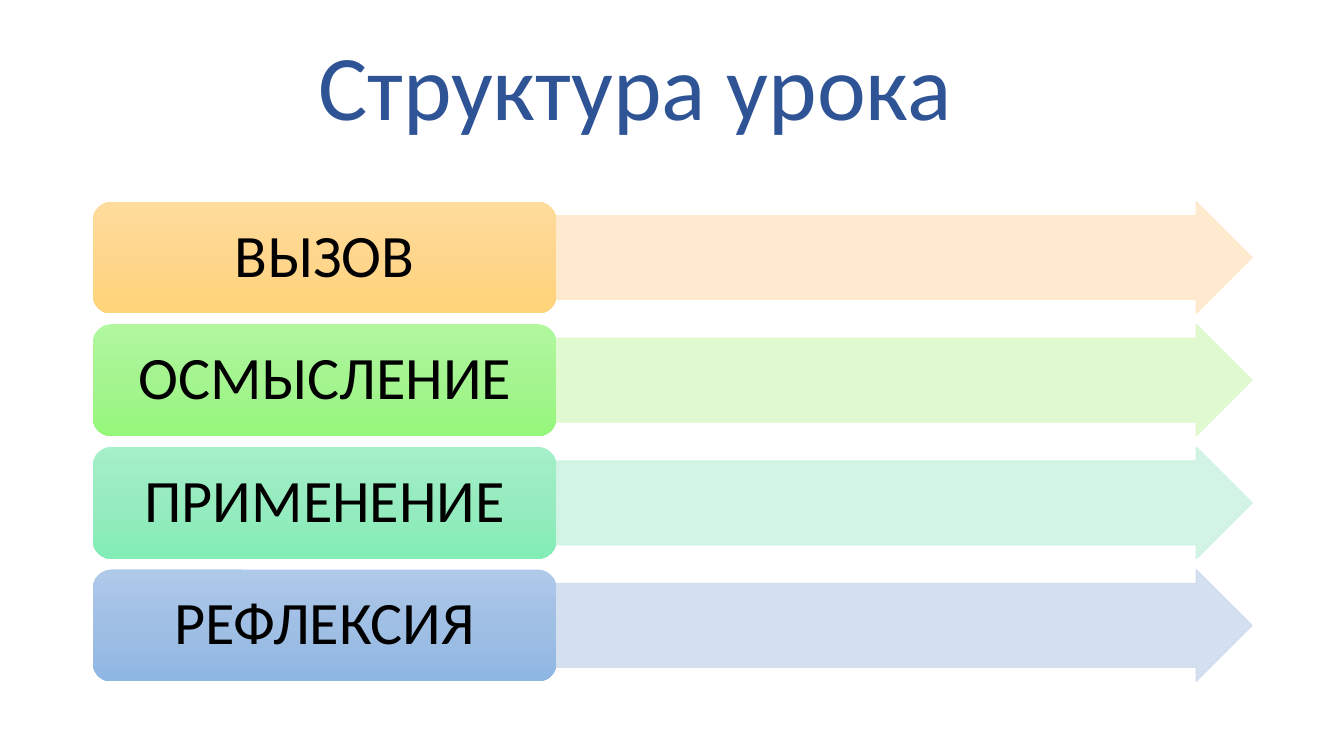
from copy import deepcopy

from pptx import Presentation
from pptx.dml.color import RGBColor
from pptx.enum.shapes import MSO_SHAPE as Shape
from pptx.enum.text import MSO_ANCHOR as Anchor, PP_ALIGN as Align
from pptx.oxml.ns import qn
from pptx.oxml.xmlchemy import OxmlElement
from pptx.util import Inches, Pt

COLORS = {
    "title": "2F5496",
    "text": "000000",
    "orange": ("FFDC9B", "FFD68D", "FFD478"),
    "orange_arrow": "FFE8CA",
    "green": ("B1F79E", "A4F490", "95F87B"),
    "green_arrow": "DEF9CB",
    "mint": ("A5EFC9", "96ECBF", "83EDB6"),
    "mint_arrow": "CDF3E3",
    "blue": ("AFC9E9", "A0BFE4", "8FB7E4"),
    "blue_arrow": "D0DCEE",
}
STAGES = [
    ("ВЫЗОВ", "orange"),
    ("ОСМЫСЛЕНИЕ", "green"),
    ("ПРИМЕНЕНИЕ", "mint"),
    ("РЕФЛЕКСИЯ", "blue"),
]
LEFT, LABEL_WIDTH, ARROW_WIDTH = 0.92, 4.6, 6.9
TOP, BOTTOM, ROW_HEIGHT = 2, 6.76, 1.11
ROW_STEP = (BOTTOM - TOP - ROW_HEIGHT) / (len(STAGES) - 1)
TITLE_MARGINS = (0.1, 0.05)
LABEL_MARGINS = (0.18, 0.09)


def set_attributes(target, values):
    for name, value in values.items():
        setattr(target, name, value)


def write_text(shape, text, size, color, margins):
    side, edge = map(Inches, margins)
    frame = shape.text_frame
    set_attributes(frame, {
        "text": text, "word_wrap": True, "vertical_anchor": Anchor.MIDDLE,
        "margin_left": side, "margin_right": side,
        "margin_top": edge, "margin_bottom": edge,
    })
    paragraph = frame.paragraphs[0]
    set_attributes(paragraph, {"alignment": Align.CENTER, "line_spacing": 0.9})
    font = paragraph.runs[0].font
    set_attributes(font, {"name": "Calibri", "size": Pt(size)})
    font.color.rgb = RGBColor.from_string(COLORS[color])


def add_block(slide, kind, left, top, width, adjustments):
    shape = slide.shapes.add_shape(
        kind, Inches(left), Inches(top), Inches(width), Inches(ROW_HEIGHT))
    shape.shadow.inherit = False
    for index, value in enumerate(adjustments):
        shape.adjustments[index] = value
    return shape


def set_opacity(color_element, percent):
    alpha = OxmlElement("a:alpha")
    alpha.set("val", str(percent * 1000))
    color_element.append(alpha)


def add_arrow(slide, top, color):
    arrow = add_block(slide, Shape.RIGHT_ARROW, LEFT + LABEL_WIDTH, top,
                      ARROW_WIDTH, (0.75, 0.5))
    arrow.line.width = Pt(0.75)
    arrow.fill.solid()
    for colored in (arrow.fill.fore_color, arrow.line.color):
        colored.rgb = RGBColor.from_string(COLORS[color])
    for color_element in arrow._element.spPr.iter(qn("a:srgbClr")):
        set_opacity(color_element, 90)


def add_label(slide, top, text, color):
    label = add_block(slide, Shape.ROUNDED_RECTANGLE, LEFT, top,
                      LABEL_WIDTH, (0.167,))
    label.line.fill.background()
    # Three-stop gradient running from top to bottom
    label.fill.gradient()
    label.fill.gradient_angle = 270
    stop_list = next(label._element.spPr.iter(qn("a:gsLst")))
    stop_list.insert(1, deepcopy(stop_list[0]))
    for stop, position, shade in zip(label.fill.gradient_stops,
                                     (0, 0.5, 1), COLORS[color]):
        stop.position = position
        stop.color.rgb = RGBColor.from_string(shade)
    write_text(label, text, 43, "text", LABEL_MARGINS)


def add_title(slide, text):
    title = slide.shapes.title
    set_attributes(title, {
        "left": Inches(0.55), "top": Inches(0.28),
        "width": Inches(11.5), "height": Inches(1.24),
    })
    write_text(title, text, 66, "title", TITLE_MARGINS)


def main():
    presentation = Presentation()
    set_attributes(presentation, {
        "slide_width": Inches(13.33), "slide_height": Inches(7.5)})
    slide = presentation.slides.add_slide(presentation.slide_layouts[5])

    add_title(slide, "Структура урока")

    # One row per lesson stage: arrow and its label
    for row, (text, color) in enumerate(STAGES):
        top = TOP + row * ROW_STEP
        add_arrow(slide, top, f"{color}_arrow")
        add_label(slide, top, text, color)

    presentation.save("out.pptx")


if __name__ == "__main__":
    main()
